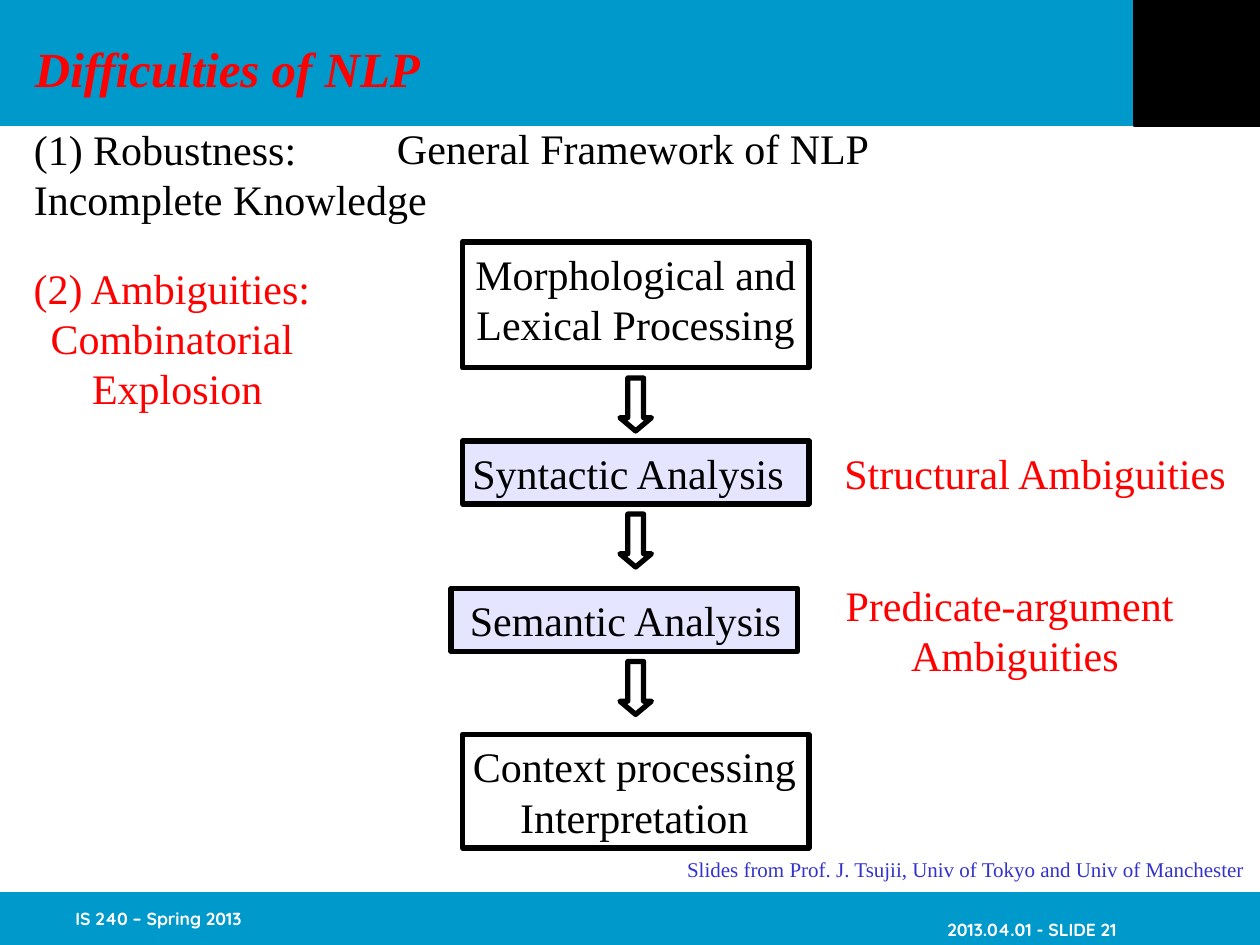
import pptx
import pptx.dml.color
import pptx.enum.shapes
import pptx.enum.text
import pptx.oxml
import pptx.oxml.ns
import pptx.util

PX = 9144  # EMU per px, 100 px to the inch
SERIF, SANS = "Times New Roman", "Quicksand"
BLACK, WHITE, RED = "000000", "FFFFFF", "FF0000"
TEAL, LAVENDER, INDIGO = "0099CC", "CCCCFF", "3333CC"
LEFT = pptx.enum.text.PP_ALIGN.LEFT
CENTER = pptx.enum.text.PP_ALIGN.CENTER
RIGHT = pptx.enum.text.PP_ALIGN.RIGHT
RECTANGLE = pptx.enum.shapes.MSO_SHAPE.RECTANGLE
DOWN_ARROW = pptx.enum.shapes.MSO_SHAPE.DOWN_ARROW


def color(hex_code):
    return pptx.dml.color.RGBColor.from_string(hex_code)


def emu(box):
    return [pptx.util.Emu(length * PX) for length in box]


def inside(region, left, top, width, height):
    """Turn a box relative to a region into a box on the page."""
    return region[0] + left, region[1] + top, width, height


def add_figure(page, kind, box, fill=None, line=None, weight=3, opacity=100):
    shape = page.shapes.add_shape(kind, *emu(box))
    shape.shadow.inherit = False
    if fill:
        shape.fill.solid()
        shape.fill.fore_color.rgb = color(fill)
        if opacity < 100:
            tint = shape.fill._xPr.find(".//" + pptx.oxml.ns.qn("a:srgbClr"))
            tint.append(pptx.oxml.parse_xml(
                f'<a:alpha {pptx.oxml.ns.nsdecls("a")} val="{opacity * 1000}"/>'))
    else:
        shape.fill.background()
    if line:
        shape.line.color.rgb = color(line)
        shape.line.width = pptx.util.Pt(weight)
    else:
        shape.line.fill.background()
    return shape


def write(frame, lines, size=24, ink=BLACK, face=SERIF, align=CENTER,
          bold=False, italic=False):
    frame.word_wrap = False
    frame.auto_size = pptx.enum.text.MSO_AUTO_SIZE.NONE
    frame.vertical_anchor = pptx.enum.text.MSO_ANCHOR.MIDDLE
    for number, line in enumerate(lines):
        para = frame.add_paragraph() if number else frame.paragraphs[0]
        para.alignment = align
        span = para.add_run()
        span.text = line
        span.font.name = face
        span.font.size = pptx.util.Pt(size)
        span.font.bold = bold
        span.font.italic = italic
        span.font.color.rgb = color(ink)


def add_text(page, box, lines, **style):
    label = page.shapes.add_textbox(*emu(box))
    write(label.text_frame, lines, **style)
    return label


def add_header(page, region):
    add_figure(page, RECTANGLE, region, TEAL)
    add_figure(page, RECTANGLE, inside(region, 900, 0, 100, 100), BLACK, BLACK, 0.75)
    title = page.shapes.title
    title.left, title.top, title.width, title.height = emu(inside(region, 17, 25, 327, 57))
    write(title.text_frame, ["Difficulties of NLP"], size=28, ink=RED, bold=True, italic=True)
    # Bring the title in front of the band
    page.shapes._spTree.append(title._element)


def add_footer(page, region):
    add_figure(page, RECTANGLE, region, TEAL)
    style = {"size": 10, "ink": WHITE, "face": SANS, "bold": True}
    add_text(page, inside(region, 50, 0, 208, 42), ["IS 240 – Spring 2013"],
             align=LEFT, **style)
    date = add_text(page, inside(region, 678, 19, 208, 22), ["2013.04.01 - SLIDE 21"],
                    align=RIGHT, **style)
    frame = date.text_frame
    frame.margin_top = frame.margin_bottom = frame.margin_right = 0


def add_difficulties(page, region):
    add_text(page, inside(region, 1, 1, 332, 90),
             ["(1) Robustness:", "Incomplete Knowledge"], align=LEFT)
    add_text(page, inside(region, 0, 111, 241, 130),
             ["(2) Ambiguities:", "Combinatorial", " Explosion"], ink=RED)


def add_pipeline(page, region):
    add_text(page, inside(region, -53, 0, 395, 50), ["General Framework of NLP"])
    # Stages: frame left, top, height, fill, label left, label width, label height, lines
    stages = [
        (9, 100, 100, None, 9, 275, 90, ["Morphological and", "Lexical Processing"]),
        (9, 258, 50, LAVENDER, 6, 269, 50, ["Syntactic Analysis"]),
        (0, 375, 50, LAVENDER, 4, 269, 50, ["Semantic Analysis"]),
        (9, 491, 90, None, 7, 277, 90, ["Context processing", "Interpretation"]),
    ]
    for left, top, height, fill, text_left, text_width, text_height, lines in stages:
        add_figure(page, RECTANGLE, inside(region, left, top, 275, height),
                   fill, BLACK, opacity=50)
        add_text(page, inside(region, text_left, top, text_width, text_height), lines)
    # Arrows between the stages
    for top in (208, 316, 433):
        arrow = add_figure(page, DOWN_ARROW, inside(region, 134, top, 25, 42), line=BLACK)
        arrow.adjustments[0] = 0.5
        arrow.adjustments[1] = 0.42


def add_ambiguities(page, region):
    add_text(page, inside(region, 0, 0, 325, 50), ["Structural Ambiguities"], ink=RED)
    add_text(page, inside(region, 2, 105, 289, 90),
             ["Predicate-argument ", "Ambiguities"], ink=RED)


def add_credit(page, region):
    add_text(page, region,
             ["Slides from Prof. J. Tsujii, Univ of Tokyo and Univ of Manchester"],
             size=12, ink=INDIGO)


def main():
    deck = pptx.Presentation()
    deck.slide_width, deck.slide_height = emu((1000, 750))
    page = deck.slides.add_slide(deck.slide_layouts[5])
    add_header(page, (0, 0, 1000, 100))
    add_footer(page, (0, 708, 1000, 42))
    add_difficulties(page, (16, 92, 333, 241))
    add_pipeline(page, (358, 92, 284, 581))
    add_ambiguities(page, (659, 350, 325, 195))
    add_credit(page, (534, 675, 465, 30))
    deck.save("out.pptx")


if __name__ == "__main__":
    main()
